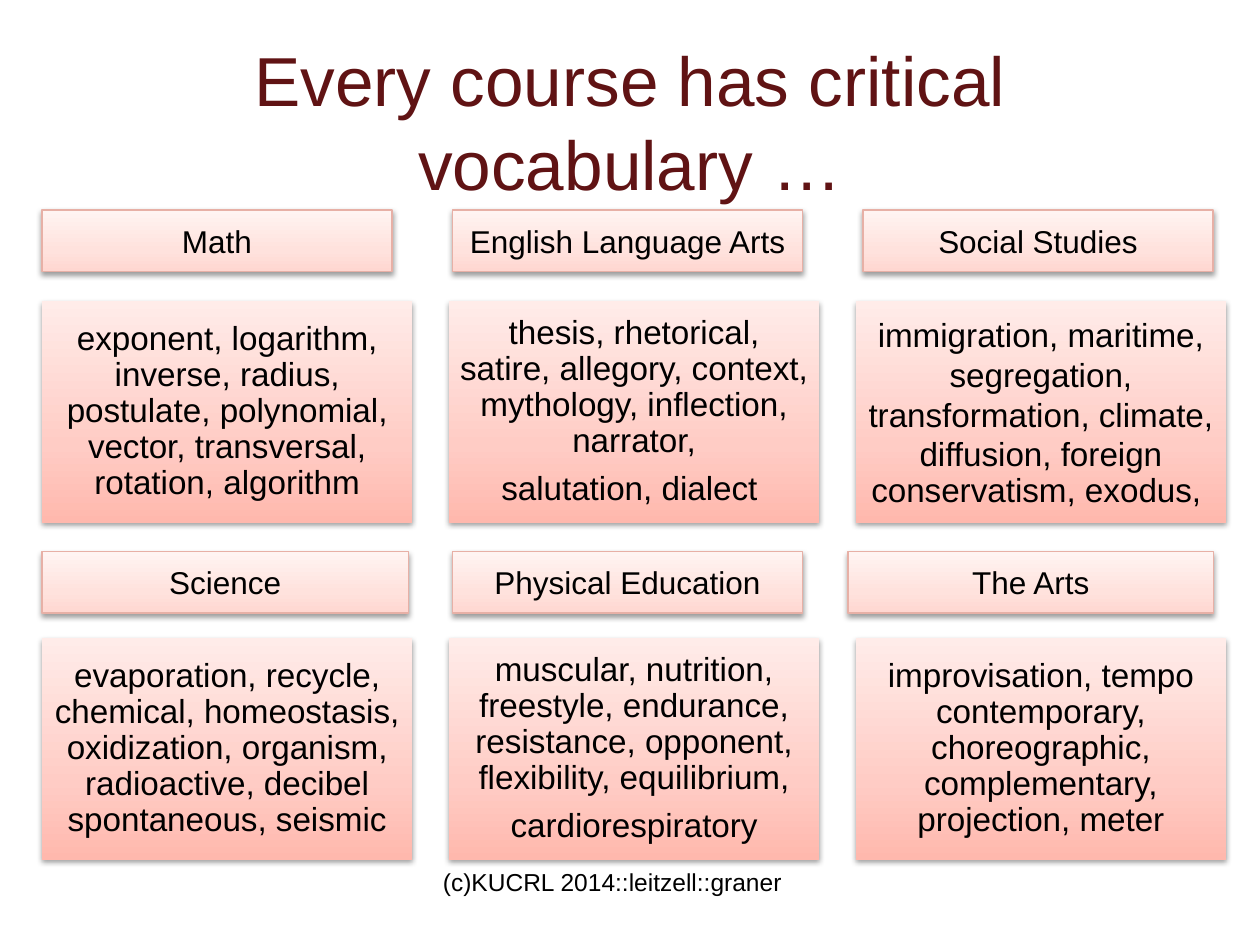
from copy import deepcopy
from dataclasses import dataclass

from lxml import etree
from pptx import Presentation
from pptx import util as u
from pptx.dml.color import RGBColor
from pptx.enum import shapes, text
from pptx.oxml import ns

Pt = u.Pt


@dataclass(frozen=True)
class Theme:
    font: str = "Arial"
    title_color: str = "601314"
    ink: str = "000000"
    edge: str = "E7B0A6"
    heading_fill: tuple = ((0, "FFD7D1"), (0.35, "FFE2DD"), (1, "FFF4F2"))
    words_fill: tuple = ((0, "FFB8AD"), (0.35, "FFCCC5"), (1, "FFECE9"))
    title_size: float = 39.6
    heading_size: float = 18
    words_size: float = 19
    credit_size: float = 14


THEME = Theme()
CENTER = {"alignment": text.PP_ALIGN.CENTER}
LEFT = {"alignment": text.PP_ALIGN.LEFT}
TIGHT = {**CENTER, "line_spacing": 0.9, "space_after": Pt(6.65)}
MIDDLE = {
    "word_wrap": True,
    "auto_size": text.MSO_AUTO_SIZE.NONE,
    "vertical_anchor": text.MSO_ANCHOR.MIDDLE,
}
TOP = {**MIDDLE, "vertical_anchor": text.MSO_ANCHOR.TOP}
WORDS_FRAME = {
    **MIDDLE,
    **dict.fromkeys(("margin_left", "margin_right", "margin_top", "margin_bottom"), Pt(6)),
}

HEADING_LEFT, HEADING_STEP, HEADING_WIDTH, HEADING_HEIGHT = 24, 234.6, 200, 35.2
WORDS_LEFT, WORDS_STEP, WORDS_WIDTH, WORDS_HEIGHT = 24, 232.5, 211.7, 126.7
HEADING_TOPS = (120, 315.2)
WORDS_TOPS = (172, 364.5)

COURSES = (
    (
        ("Math", [("exponent, logarithm, inverse, radius, postulate, polynomial, "
                   "vector, transversal, rotation, algorithm", TIGHT)]),
        ("English Language Arts", [
            ("thesis, rhetorical, satire, allegory, context, mythology, "
             "inflection, narrator,", TIGHT),
            ("salutation, dialect ", TIGHT)]),
        ("Social Studies", [
            ("immigration, maritime, segregation, transformation, climate, "
             "diffusion, foreign", CENTER),
            ("conservatism, exodus, ", TIGHT)]),
    ),
    (
        ("Science", [("evaporation, recycle, chemical, homeostasis, oxidization, organism, "
                      "radioactive, decibel spontaneous, seismic", TIGHT)]),
        ("Physical Education", [
            ("muscular, nutrition, freestyle, endurance, resistance, opponent, "
             "flexibility, equilibrium,", TIGHT),
            ("cardiorespiratory", TIGHT)]),
        ("The Arts", [("improvisation, tempo contemporary, choreographic, "
                       "complementary, projection, meter", TIGHT)]),
    ),
)
WIDE_HEADINGS = {"Science": (24, 209.3), "The Arts": (484.5, 209)}


def apply(target, values):
    for name, value in values.items():
        setattr(target, name, value)


def write(frame, paragraphs, size, color, frame_format):
    apply(frame, frame_format)
    for index, (words, paragraph_format) in enumerate(paragraphs):
        paragraph = frame.add_paragraph() if index else frame.paragraphs[0]
        apply(paragraph, paragraph_format)
        run = paragraph.add_run()
        run.text = words
        apply(run.font, {"name": THEME.font, "size": Pt(size)})
        run.font.color.rgb = RGBColor.from_string(color)


def fill_gradient(panel, colors):
    panel.fill.gradient()
    panel.fill.gradient_angle = 90
    stop_list = panel.element.spPr.find(".//" + ns.qn("a:gsLst"))
    stop_list.append(deepcopy(stop_list[0]))
    for stop, (position, color) in zip(panel.fill.gradient_stops, colors):
        stop.position = position
        stop.color.rgb = RGBColor.from_string(color)


def cast_shadow(panel):
    panel.shadow.inherit = False
    effects = panel.element.spPr.find(ns.qn("a:effectLst"))
    shadow = etree.SubElement(effects, ns.qn("a:outerShdw"), blurRad="40000",
                              dist="20000", dir="5400000", rotWithShape="0")
    color = etree.SubElement(shadow, ns.qn("a:srgbClr"), val=THEME.ink)
    etree.SubElement(color, ns.qn("a:alpha"), val="38000")


def add_panel(slide, box, colors):
    panel = slide.shapes.add_shape(shapes.MSO_SHAPE.RECTANGLE, *map(Pt, box))
    fill_gradient(panel, colors)
    panel.line.fill.background()
    cast_shadow(panel)
    return panel


def add_heading(slide, course, box):
    heading = add_panel(slide, box, THEME.heading_fill)
    heading.line.color.rgb = RGBColor.from_string(THEME.edge)
    heading.line.width = Pt(0.75)
    write(heading.text_frame, [(course, CENTER)], THEME.heading_size, THEME.ink, MIDDLE)


def add_words(slide, vocabulary, box):
    words = add_panel(slide, box, THEME.words_fill)
    write(words.text_frame, vocabulary, THEME.words_size, THEME.ink, WORDS_FRAME)


def add_title(slide, wording):
    title = slide.shapes.title
    apply(title, {"left": Pt(54), "top": Pt(24), "width": Pt(612), "height": Pt(90)})
    write(title.text_frame, [(wording, CENTER)], THEME.title_size, THEME.title_color, MIDDLE)


def add_credit(slide, wording):
    credit = slide.shapes.add_textbox(*map(Pt, (246, 492, 228, 36)))
    write(credit.text_frame, [(wording, LEFT)], THEME.credit_size, THEME.ink, TOP)


def main():
    deck = Presentation()
    apply(deck, {"slide_width": Pt(720), "slide_height": Pt(540)})
    slide = deck.slides.add_slide(deck.slide_layouts[5])
    add_title(slide, "Every course has critical vocabulary …")
    for courses, heading_top, words_top in zip(COURSES, HEADING_TOPS, WORDS_TOPS):
        for column, (course, vocabulary) in enumerate(courses):
            usual = (HEADING_LEFT + column * HEADING_STEP, HEADING_WIDTH)
            left, width = WIDE_HEADINGS.get(course, usual)
            add_words(slide, vocabulary, (WORDS_LEFT + column * WORDS_STEP, words_top,
                                          WORDS_WIDTH, WORDS_HEIGHT))
            add_heading(slide, course, (left, heading_top, width, HEADING_HEIGHT))
    add_credit(slide, "(c)KUCRL 2014::leitzell::graner")
    deck.save("out.pptx")


if __name__ == "__main__":
    main()
